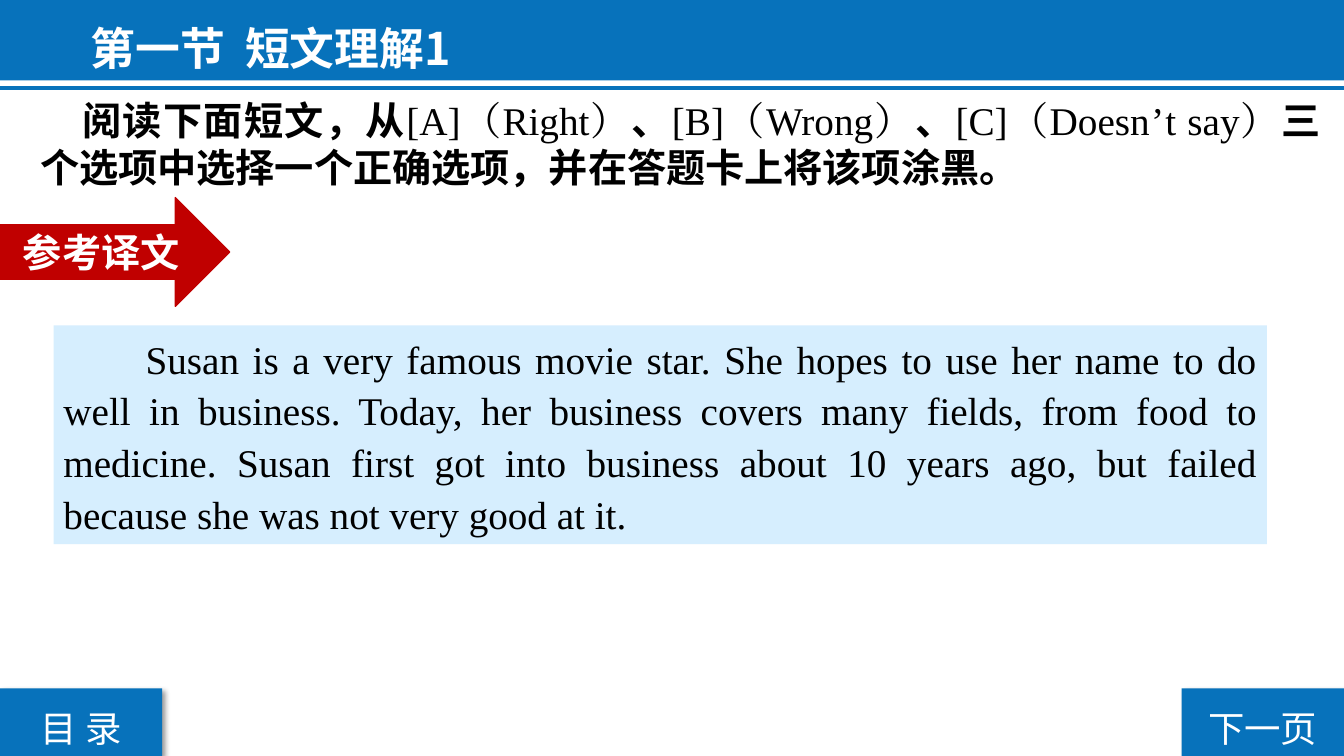
from lxml.etree import SubElement
from pptx import Presentation
from pptx.dml.color import RGBColor
from pptx.enum.shapes import MSO_CONNECTOR, MSO_SHAPE
from pptx.enum.text import MSO_ANCHOR as ANCHOR, MSO_AUTO_SIZE as AUTO, PP_ALIGN as ALIGN
from pptx.oxml.ns import qn
from pptx.util import Cm, Pt

WIDTH, HEIGHT = 33.87, 19.05
BUTTON_W, BUTTON_H = 4.09, 1.7


def color(value):
    return RGBColor.from_string(value)


def write(tf, text, align=ALIGN.LEFT, spacing=1.0, indent=0, anchor=ANCHOR.TOP,
          auto_size=AUTO.SHAPE_TO_FIT_TEXT, **font):
    """Fill a frame with one paragraph; text is a string or (text, format) pairs."""
    tf.word_wrap = True
    tf.auto_size = auto_size
    tf.vertical_anchor = anchor
    p = tf.paragraphs[0]
    p.alignment = align
    p.line_spacing = spacing
    if indent:
        p._p.get_or_add_pPr().set("indent", str(Cm(indent)))
    for part, own in [(text, {})] if isinstance(text, str) else text:
        add_run(p, part, **{**font, **own})


def add_run(p, text, size=28, face="Noto Sans CJK SC", ink="000000", bold=False):
    r = p.add_run()
    r.text = text
    r.font.size = Pt(size)
    r.font.bold = bold
    r.font.name = face
    r.font.color.rgb = color(ink)
    rPr = r._r.get_or_add_rPr()
    rPr.set("lang", "zh-CN")
    SubElement(rPr, qn("a:ea")).set("typeface", face)


class Lesson:
    blue, pale, red, white = "0772BB", "D6EEFE", "C00000", "FFFFFF"
    latin = "Times New Roman"

    def __init__(self, slide):
        self.s = slide

    def shape(self, kind, x, y, w, h, fill, line=None):
        sp = self.s.shapes.add_shape(kind, Cm(x), Cm(y), Cm(w), Cm(h))
        sp.fill.solid()
        sp.fill.fore_color.rgb = color(fill)
        if line:
            sp.line.color.rgb = color(line)
            sp.line.width = Pt(1)
        else:
            sp.line.fill.background()
        sp.shadow.inherit = False
        return sp

    def rule(self, y):
        c = self.s.shapes.add_connector(MSO_CONNECTOR.STRAIGHT, Cm(WIDTH), Cm(y), Cm(0), Cm(y))
        c.line.color.rgb = color(self.blue)
        c.line.width = Pt(3)
        SubElement(c._element.spPr, qn("a:effectLst"))

    def button(self, x, text):
        sp = self.shape(MSO_SHAPE.RECTANGLE, x, HEIGHT - BUTTON_H, BUTTON_W, BUTTON_H, self.blue)
        effects = sp._element.spPr.find(qn("a:effectLst"))
        shadow = SubElement(effects, qn("a:outerShdw"), blurRad=str(Pt(4)), dist=str(Pt(3)),
                            dir=str(45 * 60000), algn="tl", rotWithShape="0")
        black = SubElement(shadow, qn("a:srgbClr"), val="000000")
        SubElement(black, qn("a:alpha"), val="40000")
        write(sp.text_frame, text, align=ALIGN.CENTER, spacing=1.3, size=26, ink=self.white)

    def text(self, x, y, w, h, text, **fmt):
        write(self.s.shapes.add_textbox(Cm(x), Cm(y), Cm(w), Cm(h)).text_frame, text, **fmt)

    def passage(self, x, y, w, h, text):
        sp = self.shape(MSO_SHAPE.RECTANGLE, x, y, w, h, self.pale)
        write(sp.text_frame, text, align=ALIGN.JUSTIFY, spacing=1.1, indent=2.07, face=self.latin)

    def arrow(self, x, y, w, h, text):
        sp = self.shape(MSO_SHAPE.RIGHT_ARROW, x, y, w, h, self.red, line=self.red)
        write(sp.text_frame, text, align=ALIGN.CENTER, anchor=ANCHOR.MIDDLE,
              auto_size=AUTO.NONE, ink=self.white, bold=True)


def main():
    prs = Presentation()
    prs.slide_width, prs.slide_height = Cm(WIDTH), Cm(HEIGHT)
    lesson = Lesson(prs.slides.add_slide(prs.slide_layouts[6]))

    lesson.shape(MSO_SHAPE.RECTANGLE, 0, 0, WIDTH, 2.03, lesson.blue)
    lesson.rule(2.21)
    lesson.button(0, "目 录")
    lesson.button(WIDTH - BUTTON_W, "下一页")
    lesson.text(2.03, 0, 23.16, 2.03, "第一节  短文理解1",
                spacing=1.3, size=32, ink=lesson.white, bold=True)
    lesson.passage(1.35, 8.2, 30.58, 5.51,
                   "Susan is a very famous movie star. She hopes to use her name to do well in "
                   "business. Today, her business covers many fields, from food to medicine. "
                   "Susan first got into business about 10 years ago, but failed because she "
                   "was not very good at it.")
    option = {"face": lesson.latin, "bold": False}
    lesson.text(0.76, 2.31, 32.77, 2.64, [
        ("阅读下面短文，从", {}),
        ("[A]（Right）", option), ("、", {}),
        ("[B]（Wrong）", option), ("、", {}),
        ("[C]（Doesn’t say）", option),
        ("三个选项中选择一个正确选项，并在答题卡上将该项涂黑。", {}),
    ], align=ALIGN.JUSTIFY, indent=1.06, bold=True)
    lesson.arrow(0, 4.98, 5.79, 2.74, "参考译文")

    prs.save("out.pptx")


if __name__ == "__main__":
    main()
